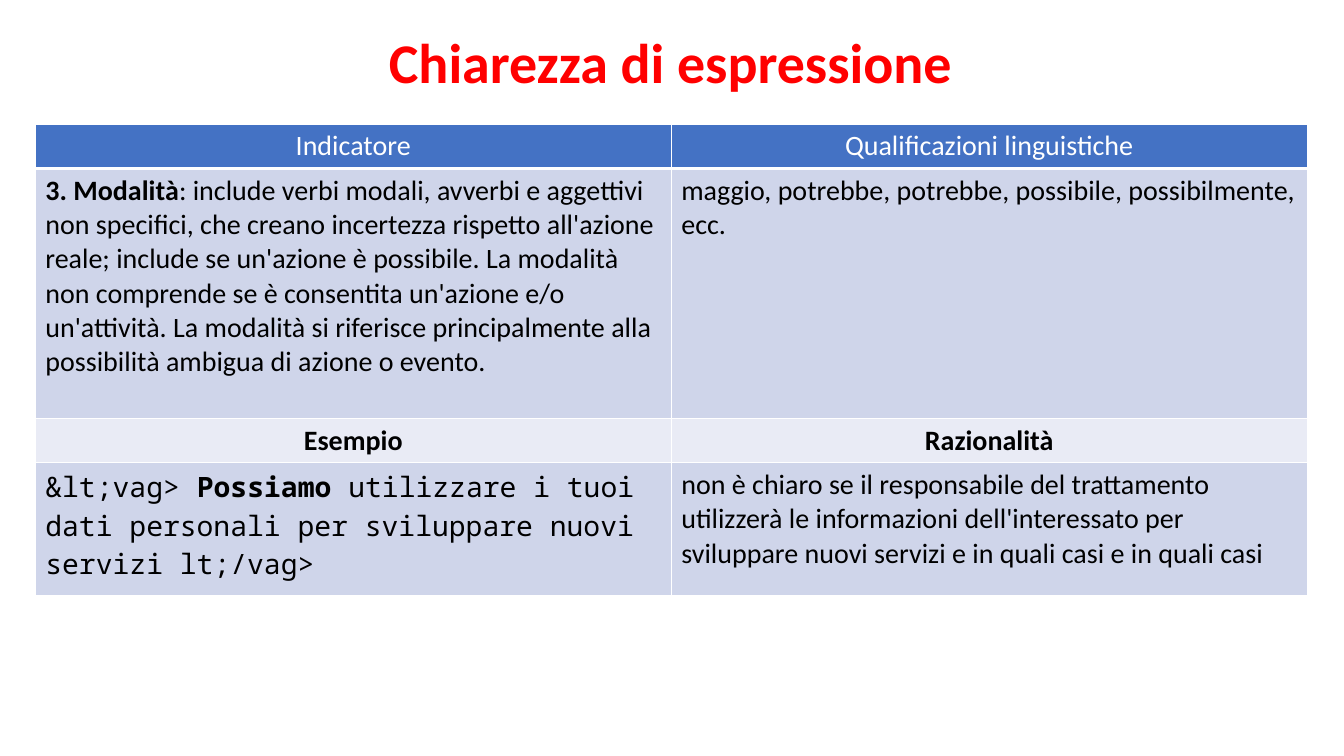
import pptx
import pptx.dml.color
import pptx.enum.text
import pptx.oxml
import pptx.oxml.ns
import pptx.util

Pt = pptx.util.Pt
CENTER = pptx.enum.text.PP_ALIGN.CENTER
LEFT = pptx.enum.text.PP_ALIGN.LEFT
MIDDLE = pptx.enum.text.MSO_ANCHOR.MIDDLE
BODY_FONT = "Calibri"
CODE_FONT = "Noto Sans Mono"
COLUMN_WIDTH = 454.3
ROW_HEIGHTS = [31.5, 178.5, 31.5, 95]
ROW_FILLS = ["4472C4", "CFD5EA", "E9EBF5", "CFD5EA"]

INDICATOR = [
    ("3. Modalità", True),
    (": include verbi modali, avverbi e aggettivi non specifici, che creano incertezza "
     "rispetto all'azione reale; include se un'azione è possibile. La modalità non comprende "
     "se è consentita un'azione e/o un'attività. La modalità si riferisce principalmente alla "
     "possibilità ambigua di azione o evento.", False),
]
QUALIFIERS = [("maggio, potrebbe, potrebbe, possibile, possibilmente, ecc.", False)]
EXAMPLE = [
    ("&lt;vag> ", False),
    ("Possiamo", True),
    (" utilizzare i tuoi dati personali per sviluppare nuovi servizi lt;/vag>", False),
]
RATIONALE = [
    ("non è chiaro se il responsabile del trattamento utilizzerà le informazioni "
     "dell'interessato per sviluppare nuovi servizi e in quali casi e in quali casi", False),
]


def to_color(value):
    """Turn a hex string into a colour."""
    return pptx.dml.color.RGBColor.from_string(value)


def write_text(paragraph, runs, size=20, color="000000", font=BODY_FONT, align=LEFT):
    """Write (text, bold) runs into a paragraph with one format."""
    paragraph.alignment = align
    for text, bold in runs:
        run = paragraph.add_run()
        run.text = text
        run.font.name = font
        run.font.size = Pt(size)
        run.font.bold = bold
        run.font.color.rgb = to_color(color)


def add_title(slide, text):
    """Place and fill the title placeholder."""
    title = slide.shapes.title
    title.left, title.top, title.width, title.height = Pt(64.8), Pt(7.2), Pt(828), Pt(79.2)
    frame = title.text_frame
    frame.word_wrap = True
    frame.auto_size = pptx.enum.text.MSO_AUTO_SIZE.NONE
    frame.vertical_anchor = MIDDLE
    paragraph = frame.paragraphs[0]
    paragraph.line_spacing = 0.9
    write_text(paragraph, [(text, True)], size=40, color="FF0000", align=CENTER)


def format_cell(cell, fill, bottom_width=1):
    """Give a cell white borders and a solid fill."""
    properties = cell._tc.get_or_add_tcPr()
    for side, width in {"L": 1, "R": 1, "T": 1, "B": bottom_width}.items():
        properties.append(pptx.oxml.parse_xml(
            f'<a:ln{side} {pptx.oxml.ns.nsdecls("a")} w="{Pt(width)}">'
            f'<a:solidFill><a:srgbClr val="FFFFFF"/></a:solidFill></a:ln{side}>'))
    cell.fill.solid()
    cell.fill.fore_color.rgb = to_color(fill)


def add_table(slide, rows):
    """Add the table from rows of (cell runs, text format)."""
    frame = slide.shapes.add_table(len(rows), 2, Pt(25.2), Pt(88.6),
                                   Pt(2 * COLUMN_WIDTH), Pt(sum(ROW_HEIGHTS)))
    table = frame.table
    for column in table.columns:
        column.width = Pt(COLUMN_WIDTH)
    for row_index, cells in enumerate(rows):
        table.rows[row_index].height = Pt(ROW_HEIGHTS[row_index])
        for column_index, (runs, text_format) in enumerate(cells):
            cell = table.cell(row_index, column_index)
            format_cell(cell, ROW_FILLS[row_index], bottom_width=3 if row_index == 0 else 1)
            write_text(cell.text_frame.paragraphs[0], runs, **text_format)


def main():
    """Build and save the slide."""
    presentation = pptx.Presentation()
    presentation.slide_width, presentation.slide_height = Pt(960), Pt(540)
    slide = presentation.slides.add_slide(presentation.slide_layouts[5])
    add_title(slide, "Chiarezza di espressione")
    header = {"color": "FFFFFF", "align": CENTER}
    subheader = {"align": CENTER}
    add_table(slide, [
        [([("Indicatore", False)], header), ([("Qualificazioni linguistiche", False)], header)],
        [(INDICATOR, {}), (QUALIFIERS, {})],
        [([("Esempio", True)], subheader), ([("Razionalità", True)], subheader)],
        [(EXAMPLE, {"font": CODE_FONT}), (RATIONALE, {})],
    ])
    presentation.save("out.pptx")


if __name__ == "__main__":
    main()
